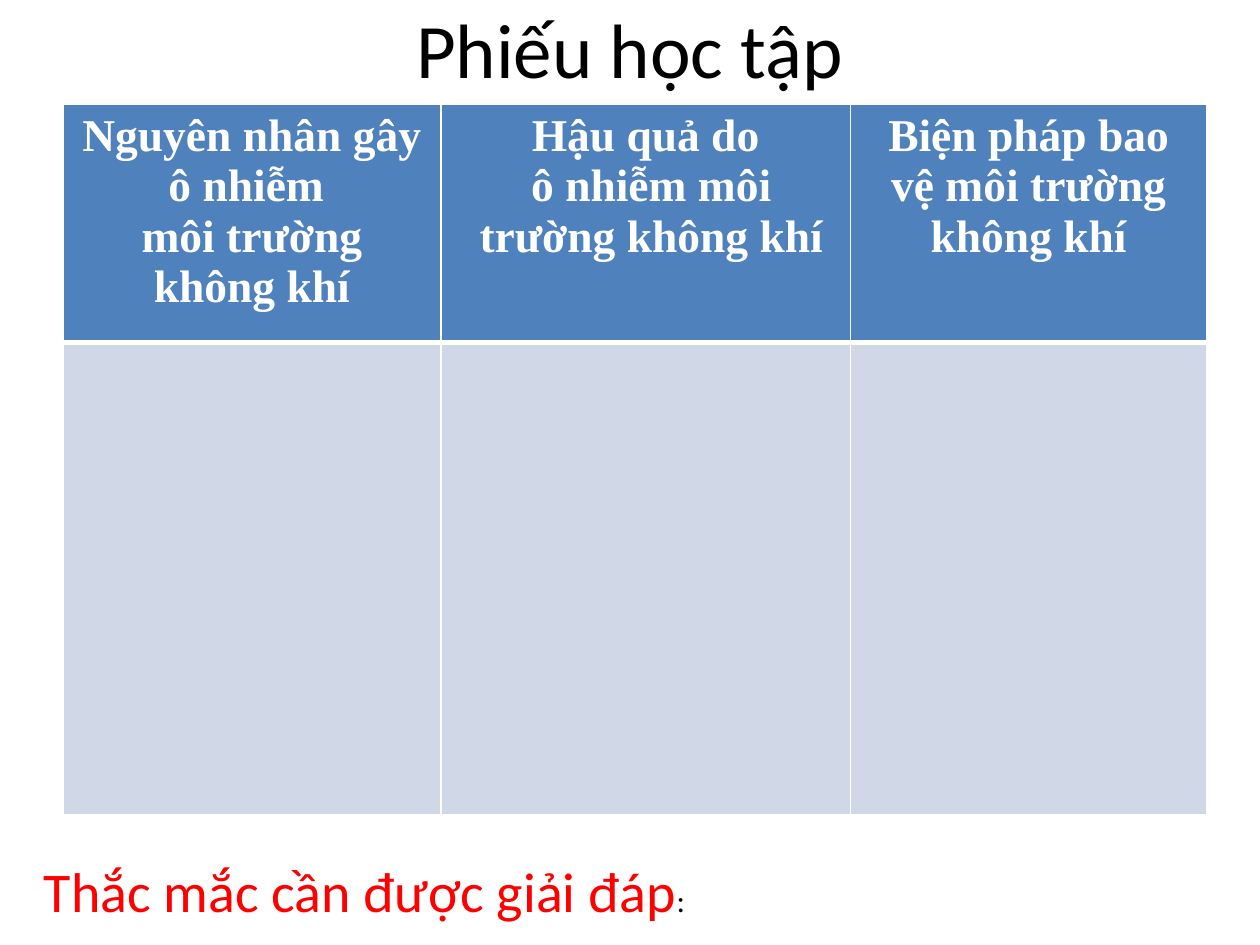
from dataclasses import dataclass

from lxml.etree import SubElement
from pptx import Presentation
from pptx.dml.color import RGBColor
from pptx.enum.text import MSO_ANCHOR, PP_ALIGN
from pptx.oxml.ns import qn
from pptx.slide import Slide
from pptx.table import _Cell
from pptx.util import Inches, Pt

BLACK = RGBColor(0x00, 0x00, 0x00)
WHITE = RGBColor(0xFF, 0xFF, 0xFF)
RED = RGBColor(0xFF, 0x00, 0x00)
HEADER_BLUE = RGBColor(0x4F, 0x81, 0xBD)
BODY_BLUE = RGBColor(0xD0, 0xD8, 0xE8)


@dataclass(frozen=True)
class TextStyle:
    size: int
    color: RGBColor
    font: str = "Calibri"
    bold: bool = False


@dataclass(frozen=True)
class Column:
    width: float
    heading: tuple[str, ...]


TITLE_STYLE = TextStyle(44, BLACK)
HEADING_STYLE = TextStyle(26, WHITE, "Times New Roman", True)
QUESTION_STYLE = TextStyle(32, RED)
COLON_STYLE = TextStyle(18, BLACK)

COLUMNS = (
    Column(3, ("Nguyên nhân gây ô nhiễm ", "môi trường không khí")),
    Column(3.25, ("Hậu quả do", " ô nhiễm môi", " trường không khí")),
    Column(2.83, ("Biện pháp bao vệ môi trường không khí",)),
)
ROW_HEIGHTS = (1.89, 3.75)
HEADER_BORDERS = {"lnL": 1, "lnR": 1, "lnT": 1, "lnB": 3}
BODY_BORDERS = {"lnL": 1, "lnR": 1, "lnT": 3, "lnB": 1}


def add_run(paragraph, text: str, style: TextStyle) -> None:
    run = paragraph.add_run()
    run.text = text
    run.font.name = style.font
    run.font.size = Pt(style.size)
    run.font.bold = style.bold
    run.font.color.rgb = style.color


def add_text(slide: Slide, box: tuple[float, float, float, float],
             runs: list[tuple[str, TextStyle]], alignment: PP_ALIGN,
             anchor: MSO_ANCHOR) -> None:
    shape = slide.shapes.add_textbox(*map(Inches, box))
    frame = shape.text_frame
    frame.word_wrap = True
    frame.vertical_anchor = anchor
    paragraph = frame.paragraphs[0]
    paragraph.alignment = alignment
    for text, style in runs:
        add_run(paragraph, text, style)


def format_cell(cell: _Cell, color: RGBColor, borders: dict[str, int]) -> None:
    properties = cell._tc.get_or_add_tcPr()
    for side, width in borders.items():
        line = SubElement(properties, qn(f"a:{side}"), w=str(Pt(width)))
        fill = SubElement(line, qn("a:solidFill"))
        SubElement(fill, qn("a:srgbClr"), val=str(WHITE))
    cell.fill.solid()
    cell.fill.fore_color.rgb = color


def add_worksheet_table(slide: Slide) -> None:
    width = sum(column.width for column in COLUMNS)
    table = slide.shapes.add_table(
        len(ROW_HEIGHTS), len(COLUMNS), Inches(0.5), Inches(0.83),
        Inches(width), Inches(sum(ROW_HEIGHTS))).table
    table.horz_banding = False
    for row, height in zip(table.rows, ROW_HEIGHTS):
        row.height = Inches(height)
    for index, column in enumerate(COLUMNS):
        table.columns[index].width = Inches(column.width)
        header = table.cell(0, index)
        format_cell(header, HEADER_BLUE, HEADER_BORDERS)
        format_cell(table.cell(1, index), BODY_BLUE, BODY_BORDERS)
        frame = header.text_frame
        for position, text in enumerate(column.heading):
            paragraph = frame.add_paragraph() if position else frame.paragraphs[0]
            paragraph.alignment = PP_ALIGN.CENTER
            add_run(paragraph, text, HEADING_STYLE)


def main() -> None:
    presentation = Presentation()
    presentation.slide_width = Inches(10)
    presentation.slide_height = Inches(7.5)
    slide = presentation.slides.add_slide(presentation.slide_layouts[6])
    add_text(slide, (0.5, -0.25, 9, 1.25), [("Phiếu học tập", TITLE_STYLE)],
             PP_ALIGN.CENTER, MSO_ANCHOR.MIDDLE)
    add_worksheet_table(slide)
    add_text(slide, (0.25, 6.75, 9.42, 0.64),
             [("Thắc mắc cần được giải đáp", QUESTION_STYLE), (":", COLON_STYLE)],
             PP_ALIGN.LEFT, MSO_ANCHOR.TOP)
    presentation.save("out.pptx")


if __name__ == "__main__":
    main()
